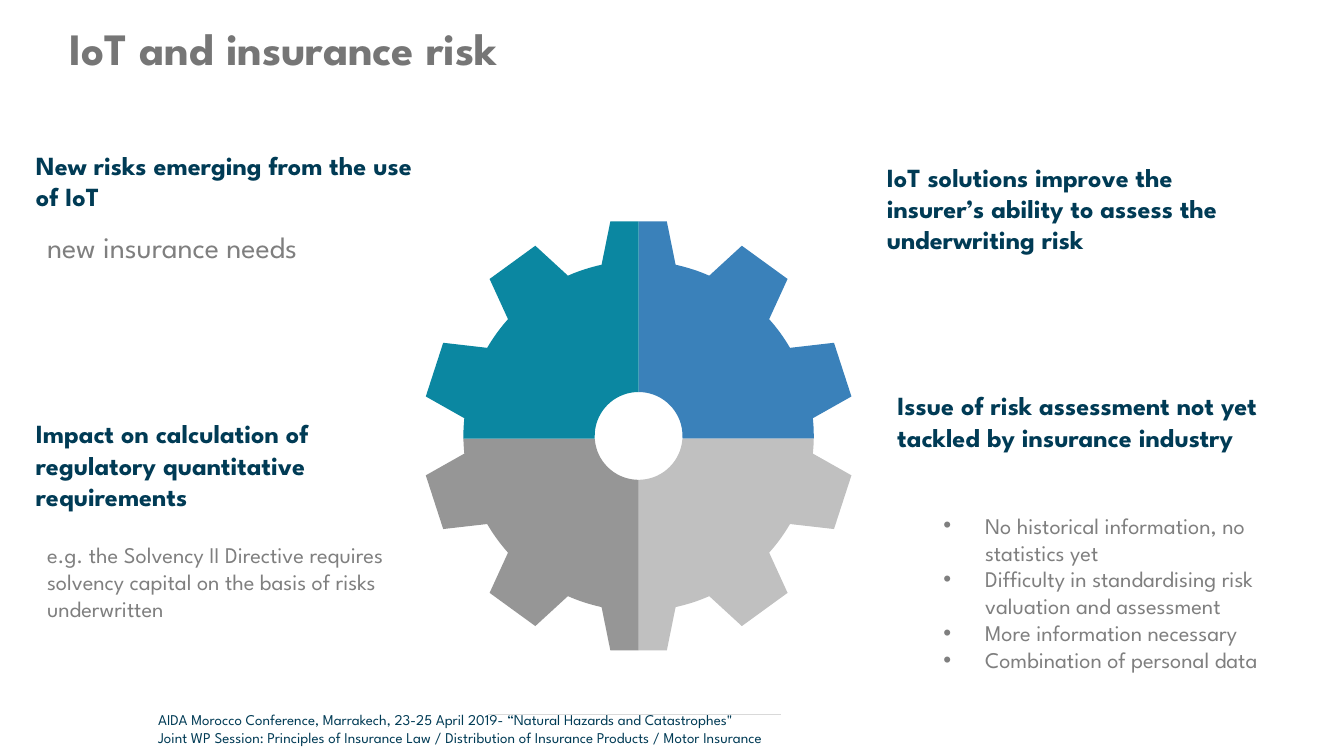
"""Build the slide on IoT and insurance risk: a four-part gear with notes around it."""
from dataclasses import dataclass
from math import cos, radians, sin

from lxml.etree import SubElement
from pptx import Presentation
from pptx.dml.color import RGBColor
from pptx.enum.shapes import MSO_CONNECTOR as Connector
from pptx.enum.text import MSO_AUTO_SIZE as AutoSize
from pptx.oxml.ns import qn
from pptx.util import Cm, Pt


@dataclass(frozen=True)
class Theme:
    font: str = "League Spartan"
    navy: str = "003B55"
    title_gray: str = "767676"
    text_gray: str = "7F7F7F"
    rule_gray: str = "D9D9D9"
    blue: str = "3A81BA"
    silver: str = "C0C0C0"
    gray: str = "969696"
    teal: str = "0B87A1"
    title: int = 24
    lead: int = 16
    heading: int = 14
    body: int = 12
    footer: int = 8


theme = Theme()
deck = Presentation()
deck.slide_width, deck.slide_height = Cm(25.4), Cm(14.29)
page = deck.slides.add_slide(deck.slide_layouts[6])


def add_text(text, *, at, size, color, bold=False, spacing=None, bullet=None, grow=True):
    box = page.shapes.add_textbox(*map(Cm, at))
    frame = box.text_frame
    frame.word_wrap = True
    frame.auto_size = AutoSize.SHAPE_TO_FIT_TEXT if grow else AutoSize.NONE
    for index, line in enumerate(text.split("\n")):
        para = frame.paragraphs[0] if index == 0 else frame.add_paragraph()
        if spacing:
            para.line_spacing = spacing
        if bullet:
            para.level = 1
            settings = para._p.get_or_add_pPr()
            settings.set("marL", str(Cm(2.06)))
            settings.set("indent", str(Cm(-0.79)))
            SubElement(settings, qn("a:buFont"), typeface="Arial")
            SubElement(settings, qn("a:buChar"), char=bullet)
        span = para.add_run()
        span.text = line
        span.font.name = theme.font
        span.font.size = Pt(size)
        span.font.bold = bold
        span.font.color.rgb = RGBColor.from_string(color)


add_text(
    "AIDA Morocco Conference, Marrakech, 23-25 April 2019- “Natural Hazards and Catastrophes\"\n"
    "Joint WP Session: Principles of Insurance Law / Distribution of Insurance Products / Motor Insurance",
    at=(2.74, 13.31, 21.59, 0.94), size=theme.footer, color=theme.navy,
)
add_text(
    "IoT and insurance risk", at=(1.07, 0.38, 21.59, 2.31),
    size=theme.title, color=theme.title_gray, bold=True, spacing=0.9, grow=False,
)

center_x, center_y, seam_y = 12.07, 8.24, 8.29
tip_radius, ring_radius, hole_radius = 4.09, 3.31, 0.83
tip_angle, root_angle, pitch = 7.5, 12.2, 36
arc_steps = 8

profile = [(0, tip_radius * cos(radians(tip_angle)))]
for tooth in range(3):
    middle = tooth * pitch
    if tooth:
        profile.append((middle - tip_angle, tip_radius))
    profile.append((middle + tip_angle, tip_radius))
    first, last = middle + root_angle, min(middle + pitch - root_angle, 90)
    profile += [(first + (last - first) * step / arc_steps, ring_radius)
                for step in range(arc_steps + 1)]
profile += [(90 - step * 5, hole_radius) for step in range(19)]

gear = page.shapes.add_group_shape()
quadrants = [(1, -1, theme.blue), (1, 1, theme.silver), (-1, 1, theme.gray), (-1, -1, theme.teal)]
for side, rise, color in quadrants:
    points = []
    for angle, radius in profile:
        x = center_x + side * radius * sin(radians(angle))
        y = seam_y if angle == 90 else center_y + rise * radius * cos(radians(angle))
        points.append((Cm(x), Cm(y)))
    outline = gear.shapes.build_freeform(*points[0])
    outline.add_line_segments(points[1:], close=True)
    quarter = outline.convert_to_shape()
    quarter.shadow.inherit = False
    quarter.fill.solid()
    quarter.fill.fore_color.rgb = RGBColor.from_string(color)
    quarter.line.fill.background()

rule = page.shapes.add_connector(Connector.STRAIGHT, Cm(9.22), Cm(13.51), Cm(14.76), Cm(13.51))
rule.line.color.rgb = RGBColor.from_string(theme.rule_gray)
rule.line.width = Pt(0.75)
SubElement(rule._element.spPr, qn("a:effectLst"))

headings = [
    ("New risks emerging from the use of IoT", 0.43, 2.69, 1.45),
    ("Issue of risk assessment not yet tackled by insurance industry", 16.71, 7.24, 1.45),
    ("IoT solutions improve the insurer’s ability to assess the underwriting risk", 16.51, 2.92, 2.03),
    ("Impact on calculation of regulatory quantitative requirements", 0.43, 7.77, 2.03),
]
for text, left, top, height in headings:
    add_text(text, at=(left, top, 7.62, height), size=theme.heading, color=theme.navy, bold=True)

add_text("new insurance needs", at=(0.64, 4.19, 7.19, 0.94), size=theme.lead, color=theme.text_gray)
add_text(
    "e.g. the Solvency II Directive requires solvency capital on the basis of risks underwritten",
    at=(0.64, 10.11, 7.19, 1.78), size=theme.body, color=theme.text_gray,
)
add_text(
    "No historical information, no statistics yet\n"
    "Difficulty in standardising risk valuation and assessment\n"
    "More information necessary\n"
    "Combination of personal data",
    at=(16.31, 9.55, 8.69, 3.3), size=theme.body, color=theme.text_gray, bullet="•",
)

deck.save("out.pptx")
